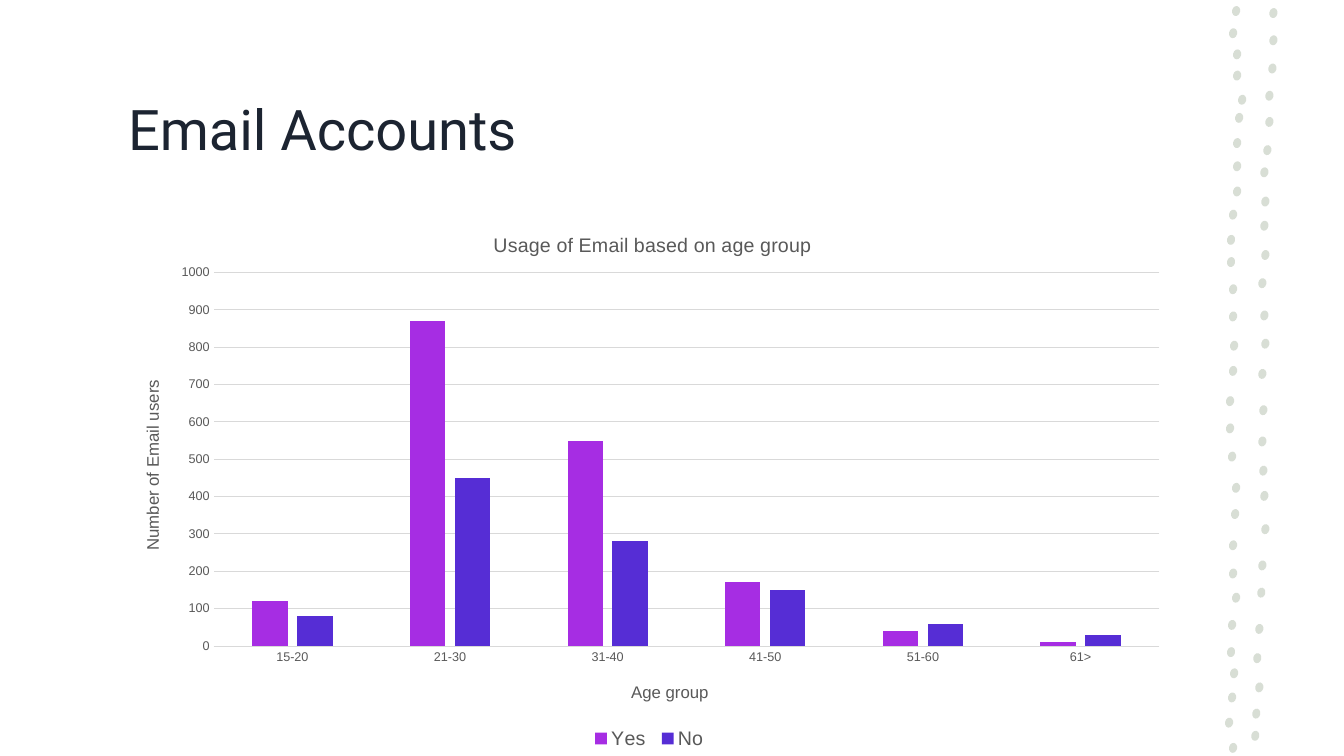
import dataclasses
import typing

import lxml.etree
import pptx
import pptx.chart.data
import pptx.dml.color
import pptx.enum.chart
import pptx.enum.shapes
import pptx.enum.text
import pptx.oxml.ns
import pptx.util

Inches = pptx.util.Inches
Pt = pptx.util.Pt
qn = pptx.oxml.ns.qn


@dataclasses.dataclass(frozen=True)
class Theme:
    heading_font: str = "Roboto"
    chart_font: str = "Arial"
    heading: str = "1C2431"
    label: str = "595959"
    grid: str = "D9D9D9"
    dot: str = "D8DED5"
    heading_size: float = 40
    chart_title_size: float = 14
    axis_title_size: float = 12
    tick_size: float = 9


@dataclasses.dataclass(frozen=True)
class Dot:
    x: float
    y: float


@dataclasses.dataclass(frozen=True)
class Series:
    name: str
    values: tuple[float, ...]
    color: str


@dataclasses.dataclass(frozen=True)
class Box:
    x: float
    y: float
    w: float
    h: float


THEME = Theme()
TITLE_BOX = Box(1.17, 0.55, 10.54, 1.45)
CHART_BOX = Box(1.17, 2.05, 10.54, 5.45)
DOT_SIZE = Box(0, 0, 0.08, 0.1)
DOT_TILT = 12

LEFT_DOTS = [Dot(*d) for d in (
    (12.26, 0.11), (12.23, 0.33), (12.27, 0.54), (12.27, 0.75), (12.32, 0.99), (12.29, 1.17),
    (12.27, 1.42), (12.27, 1.65), (12.27, 1.9), (12.23, 2.13), (12.21, 2.38), (12.21, 2.6),
    (12.23, 2.87), (12.23, 3.14), (12.24, 3.43), (12.23, 3.68), (12.2, 3.98), (12.2, 4.25),
    (12.22, 4.53), (12.26, 4.84), (12.25, 5.1), (12.23, 5.41), (12.23, 5.69), (12.26, 5.93),
    (12.22, 6.2), (12.21, 6.47), (12.24, 6.68), (12.22, 6.92), (12.19, 7.17), (12.23, 7.42),
)]
RIGHT_DOTS = [Dot(*d) for d in (
    (12.63, 0.13), (12.63, 0.4), (12.62, 0.68), (12.59, 0.95), (12.59, 1.21), (12.57, 1.49),
    (12.54, 1.71), (12.55, 2), (12.54, 2.24), (12.55, 2.53), (12.52, 2.81), (12.54, 3.13),
    (12.55, 3.41), (12.52, 3.71), (12.53, 4.07), (12.52, 4.38), (12.53, 4.67), (12.54, 4.92),
    (12.55, 5.25), (12.52, 5.61), (12.51, 5.88), (12.49, 6.24), (12.47, 6.53), (12.49, 6.82),
    (12.46, 7.08), (12.45, 7.3),
)]

AGE_GROUPS = ("15-20", "21-30", "31-40", "41-50", "51-60", "61>")
EMAIL_SERIES = (
    Series("Yes", (120, 870, 550, 170, 40, 10), "A62DE3"),
    Series("No", (80, 450, 280, 150, 60, 30), "562DD5"),
)


def rgb(color: str) -> pptx.dml.color.RGBColor:
    return pptx.dml.color.RGBColor.from_string(color)


def format_font(font: typing.Any, *, name: str, size: float, color: str) -> None:
    font.name = name
    font.size = Pt(size)
    font.bold = False
    font.color.rgb = rgb(color)


def write_text(tf: typing.Any, text: str, *, name: str = THEME.chart_font,
               size: float = THEME.axis_title_size, color: str = THEME.label,
               align: typing.Any = None) -> None:
    p = tf.paragraphs[0]
    p.alignment = align
    r = p.add_run()
    r.text = text
    format_font(r.font, name=name, size=size, color=color)


def place(sp: typing.Any, box: Box) -> None:
    sp.left, sp.top, sp.width, sp.height = map(Inches, (box.x, box.y, box.w, box.h))


def draw_dot(s: typing.Any, dot: Dot) -> None:
    w, h = DOT_SIZE.w, DOT_SIZE.h
    sp = s.shapes.add_shape(pptx.enum.shapes.MSO_SHAPE.OVAL, Inches(dot.x - w / 2),
                            Inches(dot.y - h / 2), Inches(w), Inches(h))
    sp.rotation = DOT_TILT
    sp.shadow.inherit = False
    sp.fill.solid()
    sp.fill.fore_color.rgb = rgb(THEME.dot)
    sp.line.fill.background()


def set_layout(el: typing.Any, x: float, y: float,
               w: float | None = None, h: float | None = None) -> None:
    for old in el.findall(qn("c:layout")):
        el.remove(old)
    layout = lxml.etree.Element(qn("c:layout"))
    manual = lxml.etree.SubElement(layout, qn("c:manualLayout"))
    values = {"xMode": "edge", "yMode": "edge", "x": x, "y": y, "w": w, "h": h}
    if el.tag == qn("c:plotArea"):
        values = {"layoutTarget": "inner", **values}
    for key, value in values.items():
        if value is not None:
            lxml.etree.SubElement(manual, qn(f"c:{key}")).set("val", str(value))
    leading = (qn("c:tx"), qn("c:legendPos"))
    el.insert(sum(child.tag in leading for child in el), layout)


def format_axis(axis: typing.Any, title: str, x: float, y: float) -> None:
    write_text(axis.axis_title.text_frame, title)
    set_layout(axis.axis_title.element, x, y)
    axis.major_tick_mark = pptx.enum.chart.XL_TICK_MARK.NONE
    axis.minor_tick_mark = pptx.enum.chart.XL_TICK_MARK.NONE
    format_font(axis.tick_labels.font, name=THEME.chart_font, size=THEME.tick_size,
                color=THEME.label)


def format_line(line: typing.Any) -> None:
    line.color.rgb = rgb(THEME.grid)
    line.width = Pt(0.75)


def draw_chart(s: typing.Any) -> None:
    data = pptx.chart.data.CategoryChartData()
    data.categories = AGE_GROUPS
    for series in EMAIL_SERIES:
        data.add_series(series.name, series.values)
    b = CHART_BOX
    chart = s.shapes.add_chart(pptx.enum.chart.XL_CHART_TYPE.COLUMN_CLUSTERED, Inches(b.x),
                               Inches(b.y), Inches(b.w), Inches(b.h), data).chart
    format_font(chart.font, name=THEME.chart_font, size=10, color="000000")
    write_text(chart.chart_title.text_frame, "Usage of Email based on age group",
               size=THEME.chart_title_size)
    set_layout(chart.chart_title.element, 0.35, 0.04)

    plot = chart.plots[0]
    plot.gap_width, plot.overlap, plot.vary_by_categories = 219, -27, False
    for bars, series in zip(plot.series, EMAIL_SERIES):
        bars.format.fill.solid()
        bars.format.fill.fore_color.rgb = rgb(series.color)
    set_layout(chart.element.xpath("c:chart/c:plotArea")[0], 0.09, 0.12, 0.89, 0.68)

    format_axis(chart.category_axis, "Age group", 0.48, 0.86)
    format_line(chart.category_axis.format.line)
    axis = chart.value_axis
    format_axis(axis, "Number of Email users", 0.02, 0.31)
    axis.minimum_scale, axis.maximum_scale, axis.major_unit = 0, 1000, 100
    axis.format.line.fill.background()
    format_line(axis.major_gridlines.format.line)

    chart.has_legend = True
    chart.legend.position = pptx.enum.chart.XL_LEGEND_POSITION.BOTTOM
    chart.legend.include_in_layout = False
    format_font(chart.legend.font, name=THEME.chart_font, size=THEME.chart_title_size,
                color=THEME.label)
    set_layout(chart.element.xpath("c:chart/c:legend")[0], 0.44, 0.95, 0.12, 0.05)


def main() -> None:
    prs = pptx.Presentation()
    prs.slide_width, prs.slide_height = Inches(13.33), Inches(7.5)
    s = prs.slides.add_slide(prs.slide_layouts.get_by_name("Title Only"))
    for dot in LEFT_DOTS + RIGHT_DOTS:
        draw_dot(s, dot)
    title = s.shapes.title
    place(title, TITLE_BOX)
    title.text_frame.vertical_anchor = pptx.enum.text.MSO_ANCHOR.MIDDLE
    write_text(title.text_frame, "Email Accounts", name=THEME.heading_font,
               size=THEME.heading_size, color=THEME.heading, align=pptx.enum.text.PP_ALIGN.LEFT)
    draw_chart(s)
    prs.save("out.pptx")


if __name__ == "__main__":
    main()
